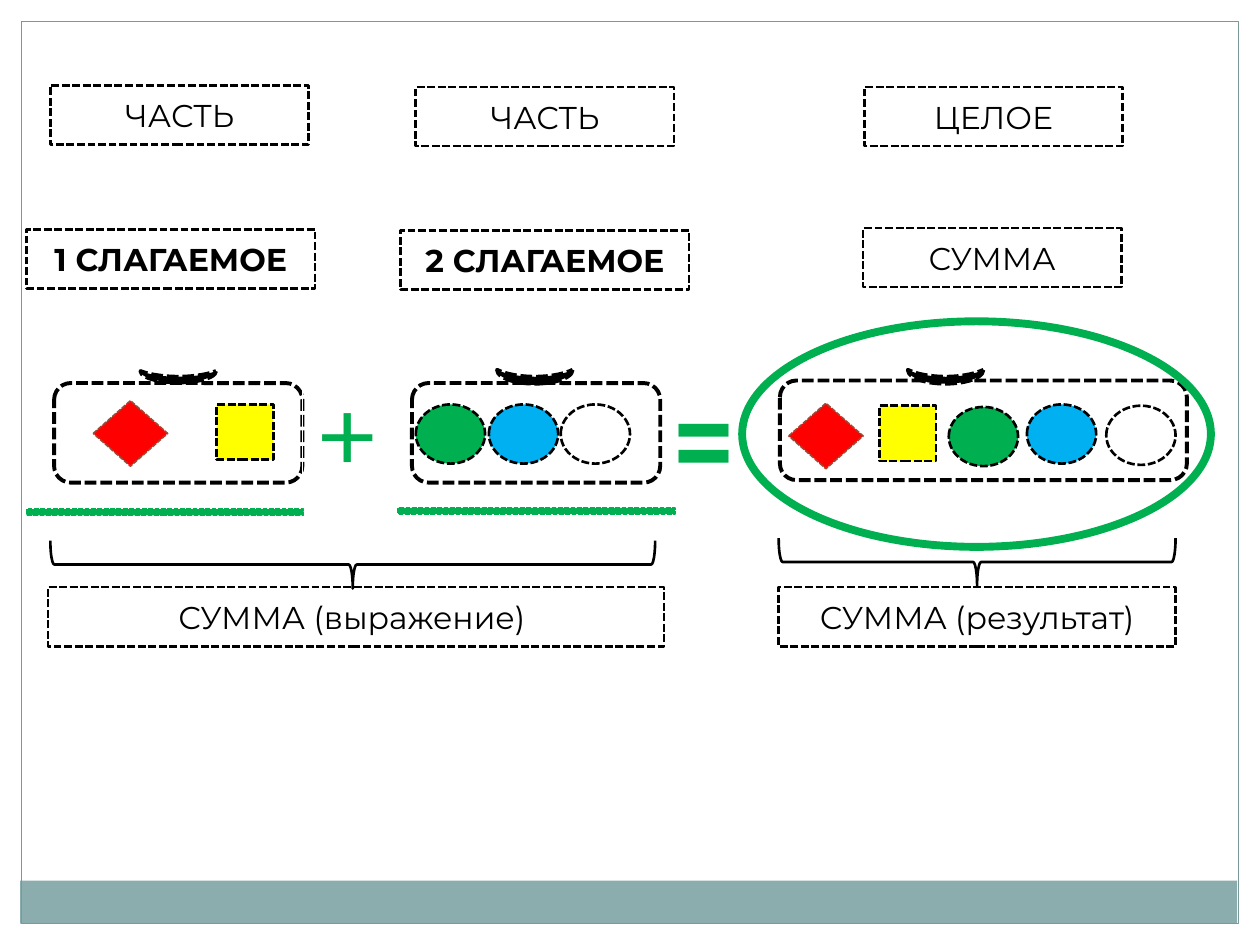
from pptx import Presentation
from pptx.dml.color import RGBColor
from pptx.enum.dml import MSO_LINE
from pptx.enum.shapes import MSO_SHAPE
from pptx.enum.text import MSO_ANCHOR, PP_ALIGN
from pptx.util import Inches, Pt

RECT, ROUND, OVAL = MSO_SHAPE.RECTANGLE, MSO_SHAPE.ROUNDED_RECTANGLE, MSO_SHAPE.OVAL
DIAMOND, MOON, BRACE = MSO_SHAPE.DIAMOND, MSO_SHAPE.MOON, MSO_SHAPE.LEFT_BRACE
DASH = MSO_LINE.SQUARE_DOT
TOP, MIDDLE = MSO_ANCHOR.TOP, MSO_ANCHOR.MIDDLE
LEFT, CENTER = PP_ALIGN.LEFT, PP_ALIGN.CENTER

COLORS = {
    "white": "FFFFFF", "black": "000000", "red": "FF0000", "rust": "9B4936",
    "yellow": "FFFF00", "green": "00B050", "blue": "00B0F0",
    "band": "8CADAE", "frame": "7C999A",
}


class SumSlide:
    font = "Montserrat"

    def __init__(self, slide):
        self.slide = slide

    def color(self, name):
        return RGBColor.from_string(COLORS[name])

    def shape(self, kind, x, y, w, h, fill=None, line="black", weight=1.5, dashed=True):
        shape = self.slide.shapes.add_shape(kind, Inches(x), Inches(y), Inches(w), Inches(h))
        shape.shadow.inherit = False
        if fill:
            shape.fill.solid()
            shape.fill.fore_color.rgb = self.color(fill)
        else:
            shape.fill.background()
        if line:
            shape.line.color.rgb = self.color(line)
            shape.line.width = Pt(weight)
            if dashed:
                shape.line.dash_style = DASH
        else:
            shape.line.fill.background()
        return shape

    def text(self, shape, words, size, color, bold, align, anchor):
        frame = shape.text_frame
        frame.word_wrap = True
        frame.vertical_anchor = anchor
        paragraph = frame.paragraphs[0]
        paragraph.alignment = align
        run = paragraph.add_run()
        run.text = words
        run.font.name = self.font
        run.font.size = Pt(size)
        run.font.bold = bold
        run.font.color.rgb = self.color(color)

    def label(self, words, x, y, w, bold=False):
        box = self.shape(RECT, x, y, w, 0.47, "white")
        self.text(box, words, 18, "black", bold, CENTER, MIDDLE)

    def sign(self, symbol, x, y, w, h, size, bold):
        box = self.shape(RECT, x, y, w, h, None, "white", 0.75, dashed=False)
        self.text(box, symbol, size, "green", bold, LEFT, TOP)

    def case(self, x, y, w):
        self.shape(ROUND, x, y, w, 0.79, "white", weight=2.25)

    def handle(self, x, w):
        self.shape(MOON, x, 2.69, w, 0.6, "black", weight=2.25).rotation = 270

    def diamond(self, x, y):
        self.shape(DIAMOND, x, y, 0.59, 0.52, "red", "rust", 0.9)

    def square(self, x, y):
        self.shape(RECT, x, y, 0.45, 0.44, "yellow")

    def circle(self, x, y, fill):
        self.shape(OVAL, x, y, 0.55, 0.47, fill)

    def brace(self, x, y, span):
        """Downward brace: a left brace turned about its centre."""
        depth = 0.38
        brace = self.shape(BRACE, x + (span - depth) / 2, y - (span - depth) / 2,
                           depth, span, dashed=False)
        brace.rotation = 270

    def underline(self, x, y):
        self.shape(RECT, x, y, 2.2, 0.05, "green", "green", 0.9)


def main():
    deck = Presentation()
    deck.slide_width, deck.slide_height = Inches(10), Inches(7.5)
    page = SumSlide(deck.slides.add_slide(deck.slide_layouts[6]))

    # Frame and bottom band
    page.shape(RECT, 0.16, 6.99, 9.66, 0.34, "band", None)
    page.shape(RECT, 0.17, 0.17, 9.66, 7.16, None, "frame", 0.75, dashed=False)

    # Cases and signs of the equation
    page.case(0.43, 3.04, 1.97)
    page.sign("+", 2.4, 2.83, 0.87, 1.21, 66, False)
    page.sign("=", 5.24, 2.93, 0.71, 1.11, 60, True)
    page.case(6.19, 3.02, 3.23)
    page.case(3.27, 3.04, 1.97)
    for x, w in ((1.37, 0.09), (7.45, 0.11), (4.19, 0.11)):
        page.handle(x, w)

    # Labels of the parts and the whole
    page.label("ЧАСТЬ", 0.4, 0.68, 2.05)
    page.label("ЧАСТЬ", 3.3, 0.69, 2.05)
    page.label("ЦЕЛОЕ", 6.86, 0.69, 2.05)
    page.label("1 СЛАГАЕМОЕ", 0.21, 1.82, 2.29, bold=True)
    page.label("2 СЛАГАЕМОЕ", 3.18, 1.83, 2.29, bold=True)
    page.label("СУММА", 6.85, 1.81, 2.05)

    # Sums under their braces
    page.label("СУММА (выражение) ", 0.38, 4.66, 4.89)
    page.label("СУММА (результат)", 6.18, 4.66, 3.15)
    page.brace(0.4, 4.29, 4.8)
    page.brace(6.18, 4.27, 3.15)

    # Figures of the two addends
    page.diamond(0.74, 3.18)
    page.square(1.72, 3.21)
    for x, fill in ((4.45, "white"), (3.88, "blue"), (3.3, "green")):
        page.circle(x, 3.21, fill)

    # The same figures together
    page.diamond(6.26, 3.2)
    page.square(6.98, 3.22)
    for x, y, fill in ((7.53, 3.23, "green"), (8.15, 3.21, "blue"), (8.78, 3.22, "white")):
        page.circle(x, y, fill)

    # Green marks: addends underlined, sum circled
    page.underline(0.21, 4.04)
    page.underline(3.16, 4.03)
    page.shape(OVAL, 5.89, 2.55, 3.72, 1.79, None, "green", 4.5, dashed=False)

    deck.save("out.pptx")


if __name__ == "__main__":
    main()
